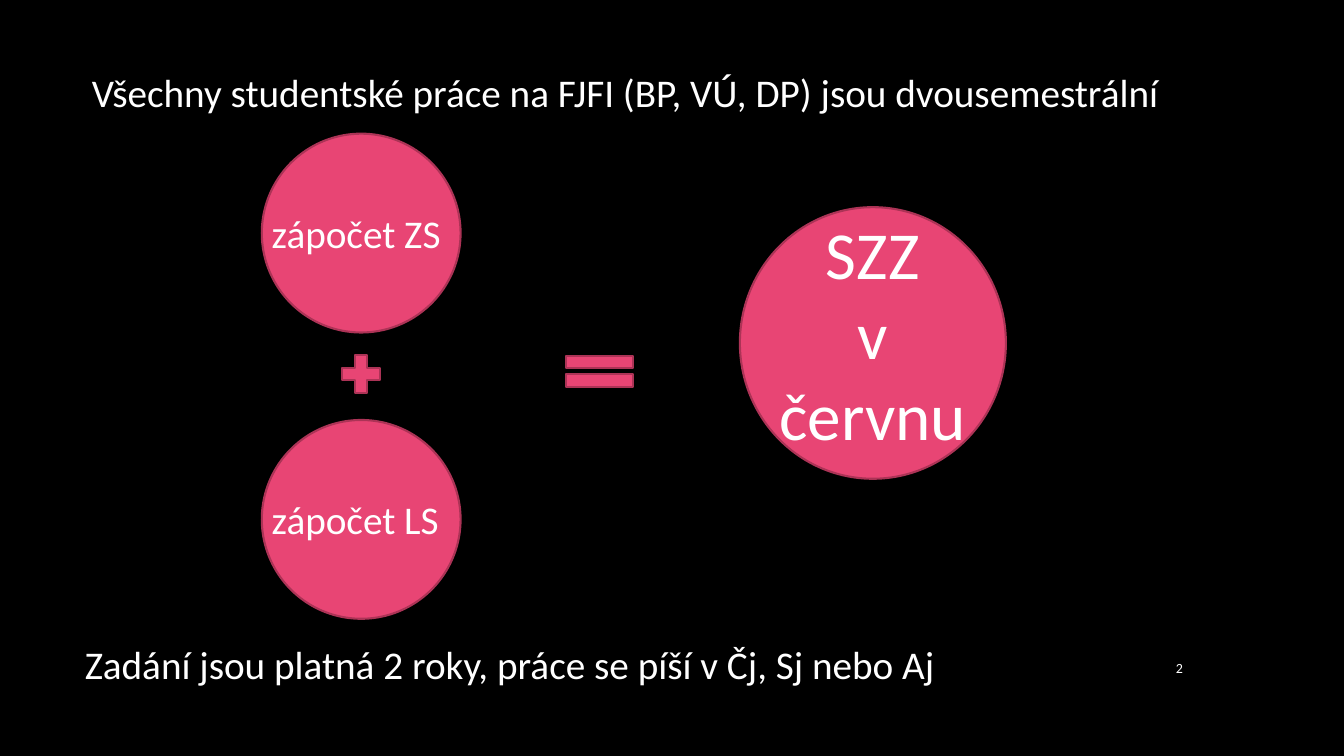
from pptx import Presentation
from pptx import util as u
from pptx.dml.color import RGBColor
from pptx.enum import shapes, text

FONT = "Calibri"
BLACK, WHITE, PINK, DARK_PINK = "000000", "FFFFFF", "E84574", "AC3356"


def paint(color_format, color):
    color_format.rgb = RGBColor.from_string(color)


def add_text(container, box, lines, size=28, align=text.PP_ALIGN.LEFT,
             anchor=text.MSO_ANCHOR.TOP):
    frame = container.add_textbox(*map(u.Pt, box)).text_frame
    frame.word_wrap = True
    frame.vertical_anchor = anchor
    for index, line in enumerate(lines):
        paragraph = frame.add_paragraph() if index else frame.paragraphs[0]
        paragraph.alignment = align
        run = paragraph.add_run()
        run.text = line
        run.font.name = FONT
        run.font.size = u.Pt(size)
        paint(run.font.color, WHITE)


def add_pink_shape(container, kind, box):
    shape = container.add_shape(kind, *map(u.Pt, box))
    shape.shadow.inherit = False
    shape.fill.solid()
    paint(shape.fill.fore_color, PINK)
    paint(shape.line.color, DARK_PINK)
    shape.line.width = u.Pt(1.5)


def add_credit(container, box, label):
    left, top, width, height = box
    add_pink_shape(container, shapes.MSO_SHAPE.OVAL, box)
    add_text(container, (left, top + 50.5, width, 41), [label])


def add_final_exam(container, box):
    left, top, width, height = box
    add_pink_shape(container, shapes.MSO_SHAPE.OVAL, box)
    add_text(container, (left + 20, top, width - 40, height - 12),
             ["SZZ", "v červnu "], 48, text.PP_ALIGN.CENTER)


def add_equation(slide, box):
    left, top, width, height = box
    group = slide.shapes.add_group_shape().shapes
    diameter = 142
    add_credit(group, (left, top, diameter, diameter), "zápočet ZS")
    add_credit(group, (left, top + height - diameter, diameter, diameter), "zápočet LS")
    add_pink_shape(group, shapes.MSO_SHAPE.MATH_PLUS, (left + 52.5, top + 153, 37, 37.5))
    add_pink_shape(group, shapes.MSO_SHAPE.MATH_EQUAL, (left + 209, top + 151, 65, 37.5))
    add_final_exam(group, (left + width - 190, top + 52.5, 190, 194))


def add_footer(slide, box):
    left, top, width, height = box
    add_text(slide.shapes, (left, top, 805, height),
             ["Zadání jsou platná 2 roky, práce se píší v Čj, Sj nebo Aj"])
    add_text(slide.shapes, (left + width - 43, top + 8.5, 43, 29.5), ["2"], 10,
             text.PP_ALIGN.RIGHT, text.MSO_ANCHOR.MIDDLE)


def add_thesis_slide(presentation):
    slide = presentation.slides.add_slide(presentation.slide_layouts[6])
    slide.background.fill.solid()
    paint(slide.background.fill.fore_color, BLACK)
    add_text(slide.shapes, (58.5, 45.5, 805, 41),
             ["Všechny studentské práce na FJFI (BP, VÚ, DP) jsou dvousemestrální"])
    add_equation(slide, (187, 95.5, 531.5, 346.5))
    add_footer(slide, (53.5, 453.5, 798.5, 41))


def main():
    presentation = Presentation()
    presentation.slide_width = u.Pt(960)
    presentation.slide_height = u.Pt(540)
    add_thesis_slide(presentation)
    presentation.save("out.pptx")


if __name__ == "__main__":
    main()
